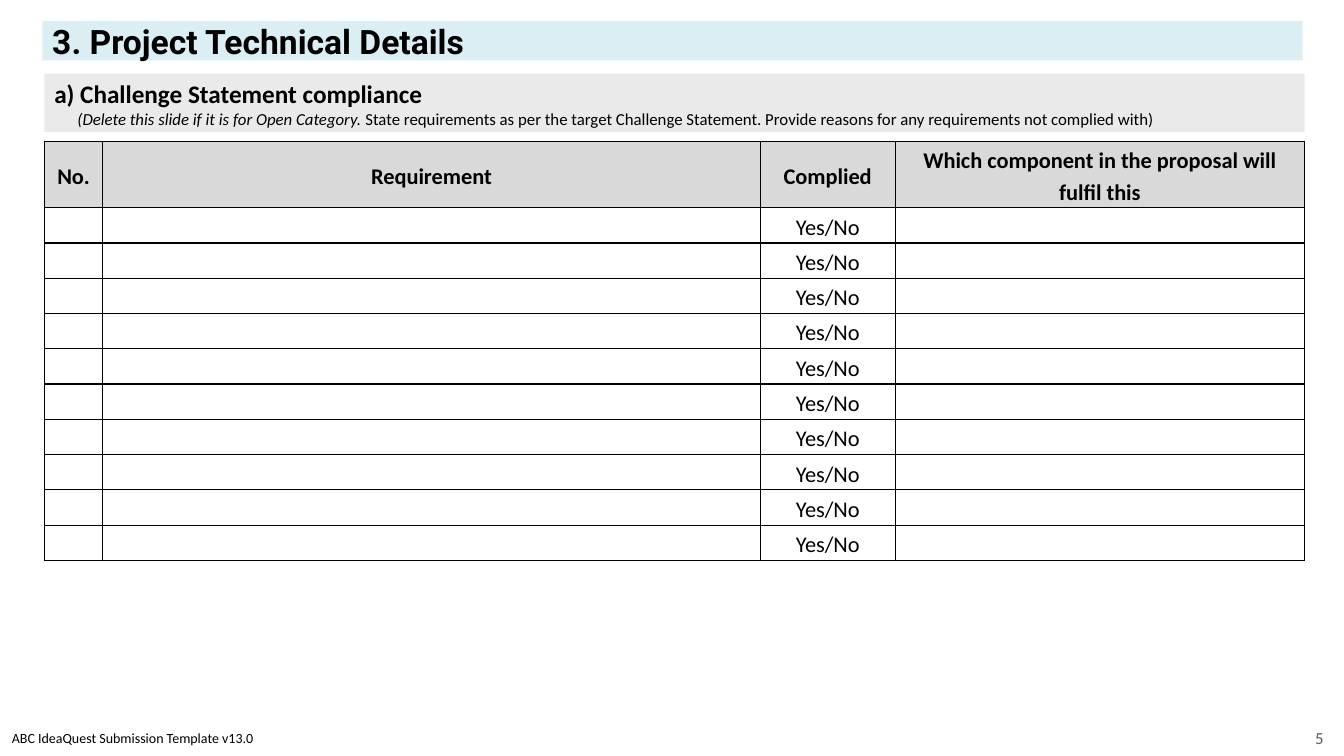
from lxml import etree
from pptx import Presentation
from pptx.dml.color import RGBColor
from pptx.enum.text import MSO_ANCHOR, PP_ALIGN
from pptx.oxml.ns import qn
from pptx.util import Inches, Pt

TOP, MIDDLE = MSO_ANCHOR.TOP, MSO_ANCHOR.MIDDLE
LEFT, CENTER = PP_ALIGN.LEFT, PP_ALIGN.CENTER
BLACK = RGBColor(0x00, 0x00, 0x00)
GREY = RGBColor(0x59, 0x59, 0x59)
PALE_BLUE = RGBColor(0xDB, 0xEE, 0xF4)
PALE_GREY = RGBColor(0xEA, 0xEA, 0xEA)
HEADER_GREY = RGBColor(0xD9, 0xD9, 0xD9)

HEADERS = ["No.", "Requirement", "Complied",
           "Which component in the proposal will fulfil this"]
COLUMN_WIDTHS = [0.58, 6.52, 1.34, 4.06]
REQUIREMENT_COUNT = 10
HEADER_HEIGHT, ROW_HEIGHT = 0.66, 0.35


def style(p, size, font="Calibri", color=BLACK, bold=False, align=LEFT):
    p.alignment = align
    p.font.size = Pt(size)
    p.font.name = font
    p.font.bold = bold
    p.font.color.rgb = color


def add_box(s, left, top, width, height, fill=None, anchor=MIDDLE):
    sp = s.shapes.add_textbox(Inches(left), Inches(top), Inches(width), Inches(height))
    if fill is not None:
        sp.fill.solid()
        sp.fill.fore_color.rgb = fill
    tf = sp.text_frame
    tf.word_wrap = True
    tf.vertical_anchor = anchor
    return tf


def add_line(tf, text, size, **look):
    p = tf.paragraphs[0]
    p.text = text
    style(p, size, **look)


def add_section_heading(s):
    tf = add_box(s, 0.44, 0.73, 12.5, 0.58, PALE_GREY, TOP)
    add_line(tf, "a) Challenge Statement compliance", 18, bold=True)
    p = tf.add_paragraph()
    style(p, 12)
    p._p.get_or_add_pPr().set("marL", str(Inches(0.23)))
    r = p.add_run()
    r.text = "(Delete this slide if it is for Open Category. "
    r.font.italic = True
    r = p.add_run()
    r.text = ("State requirements as per the target Challenge Statement. "
              "Provide reasons for any requirements not complied with)")


def add_borders(cell):
    tcPr = cell._tc.get_or_add_tcPr()
    for i, side in enumerate(("lnL", "lnR", "lnT", "lnB")):
        ln = etree.Element(qn(f"a:{side}"), w=str(Pt(1)))
        fill = etree.SubElement(ln, qn("a:solidFill"))
        etree.SubElement(fill, qn("a:srgbClr"), val=str(BLACK))
        tcPr.insert(i, ln)


def fill_cell(cell, text, header):
    cell.margin_left = cell.margin_right = Inches(0.06)
    cell.margin_top = cell.margin_bottom = Inches(0.02)
    cell.vertical_anchor = MIDDLE if header else TOP
    if header:
        cell.fill.solid()
        cell.fill.fore_color.rgb = HEADER_GREY
    else:
        cell.fill.background()
    p = cell.text_frame.paragraphs[0]
    p.text = text
    style(p, 16, bold=header, align=CENTER)
    p.line_spacing = 1.15
    add_borders(cell)


def add_compliance_table(s):
    rows = [HEADERS] + [["", "", "Yes/No", ""]] * REQUIREMENT_COUNT
    height = HEADER_HEIGHT + ROW_HEIGHT * REQUIREMENT_COUNT
    table = s.shapes.add_table(len(rows), len(HEADERS), Inches(0.44), Inches(1.4),
                               Inches(sum(COLUMN_WIDTHS)), Inches(height)).table
    table.horz_banding = False
    for column, width in zip(table.columns, COLUMN_WIDTHS):
        column.width = Inches(width)
    for i, texts in enumerate(rows):
        table.rows[i].height = Inches(ROW_HEIGHT if i else HEADER_HEIGHT)
        for j, text in enumerate(texts):
            fill_cell(table.cell(i, j), text, header=i == 0)


def add_footer(s):
    tf = add_box(s, 0.02, 7.14, 4.43, 0.36)
    add_line(tf, "ABC IdeaQuest Submission Template v13.0", 10)
    tf = add_box(s, 12.89, 7.16, 0.39, 0.31)
    tf.margin_left = tf.margin_right = tf.margin_top = tf.margin_bottom = 0
    add_line(tf, "5", 12, color=GREY, align=CENTER)


def main():
    prs = Presentation()
    prs.slide_width, prs.slide_height = Inches(13.33), Inches(7.5)
    s = prs.slides.add_slide(prs.slide_layouts[6])
    title = add_box(s, 0.42, 0.21, 12.5, 0.39, PALE_BLUE)
    add_line(title, "3. Project Technical Details", 24, font="Roboto", bold=True)
    add_section_heading(s)
    add_compliance_table(s)
    add_footer(s)
    prs.save("out.pptx")


if __name__ == "__main__":
    main()
